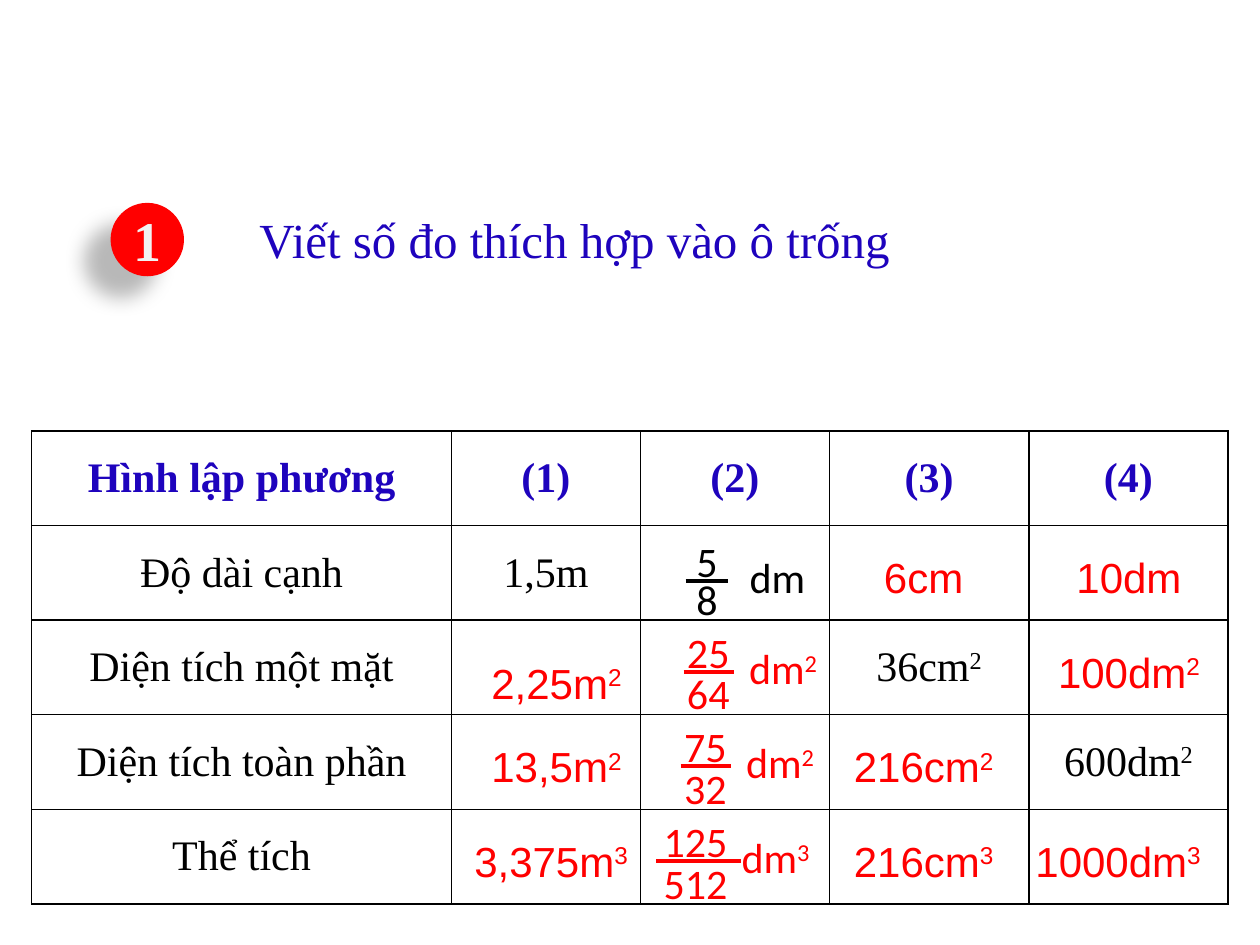
from dataclasses import dataclass

from lxml import etree
from pptx import Presentation
from pptx import util as u
from pptx.dml.color import RGBColor
from pptx.enum import shapes, text
from pptx.oxml import ns


@dataclass(frozen=True)
class Theme:
    ink: str = "000000"
    heading: str = "1E03BD"
    answer: str = "FF0000"
    badge_ink: str = "F2F2F2"
    serif: str = "Times New Roman"
    sans: str = "Arial"
    math: str = "Calibri"
    badge_size: int = 32
    title_size: int = 28
    body_size: int = 24
    rule: float = 1
    bar: float = 2.25


def child(parent, tag, **attributes):
    return etree.SubElement(parent, ns.qn(tag), attributes)


class Worksheet:
    """Draws the parts of an exercise on one slide in one theme."""

    def __init__(self, slide, theme):
        self.slide, self.theme = slide, theme

    def fill_in(self, frame, wording, face, color, size=None, bold=False, centred=True):
        base, _, power = wording.partition("^")
        line = frame.paragraphs[0]
        line.text = base
        if power:
            exponent = line.add_run()
            exponent.text = power
            exponent.font._element.set("baseline", "30000")
        line.alignment = text.PP_ALIGN.CENTER if centred else text.PP_ALIGN.LEFT
        for run in line.runs:
            run.font.name, run.font.bold = face, bold
            run.font.size = u.Pt(size or self.theme.body_size)
            run.font.color.rgb = RGBColor.from_string(color)

    def label(self, wording, left, top, width, height, face, color, parent=None, **style):
        box = (parent or self.slide).shapes.add_textbox(
            u.Cm(left), u.Cm(top), u.Cm(width), u.Cm(height))
        box.text_frame.word_wrap = True
        box.text_frame.auto_size = text.MSO_AUTO_SIZE.SHAPE_TO_FIT_TEXT
        self.fill_in(box.text_frame, wording, face, color, **style)

    def badge(self, number, left, top, size):
        disc = self.slide.shapes.add_shape(
            shapes.MSO_SHAPE.OVAL, u.Cm(left), u.Cm(top), u.Cm(size), u.Cm(size))
        disc.fill.solid()
        disc.fill.fore_color.rgb = RGBColor.from_string(self.theme.answer)
        disc.line.fill.background()
        disc.shadow.inherit = False
        effects = disc._element.spPr.find(ns.qn("a:effectLst"))
        shade = child(effects, "a:outerShdw", blurRad="150000", dist="250000",
                      dir="8460000", algn="ctr", rotWithShape="0")
        tint = child(shade, "a:srgbClr", val=self.theme.ink)
        child(tint, "a:alpha", val="28000")
        disc.text_frame.vertical_anchor = text.MSO_ANCHOR.MIDDLE
        self.fill_in(disc.text_frame, number, self.theme.serif, self.theme.badge_ink,
                     size=self.theme.badge_size, bold=True)

    def border(self, cell):
        properties = cell._tc.get_or_add_tcPr()
        for side in "LRTB":
            edge = child(properties, f"a:ln{side}", w=str(int(u.Pt(self.theme.rule))))
            child(child(edge, "a:solidFill"), "a:srgbClr", val=self.theme.ink)

    def table(self, rows, widths, left, top, height):
        grid = self.slide.shapes.add_table(
            len(rows), len(widths), u.Cm(left), u.Cm(top),
            u.Cm(sum(widths)), u.Cm(height)).table
        grid.first_row = grid.horz_banding = False
        for column, width in zip(grid.columns, widths):
            column.width = u.Cm(width)
        for r, row in enumerate(rows):
            for c, wording in enumerate(row):
                cell = grid.cell(r, c)
                self.border(cell)
                cell.fill.background()
                cell.vertical_anchor = text.MSO_ANCHOR.MIDDLE
                if wording:
                    color = self.theme.ink if r else self.theme.heading
                    self.fill_in(cell.text_frame, wording, self.theme.serif, color, bold=r == 0)

    def fraction(self, top_number, bottom_number, unit, color, left, top,
                 drop, unit_shift, bar_shift, bar_length):
        group = self.slide.shapes.add_group_shape()
        width = 0.4 + 0.75 * len(top_number)
        for wording, dx, dy, w in ((top_number, 0, 0, width),
                                   (bottom_number, 0, drop, width),
                                   (unit, unit_shift, 0.33, 2.03)):
            self.label(wording, left + dx, top + dy, w, 1.27, self.theme.math, color,
                       parent=group, centred=False)
        start, level = left + bar_shift, u.Cm(top + 1.05)
        bar = group.shapes.add_connector(
            shapes.MSO_CONNECTOR.STRAIGHT, u.Cm(start), level, u.Cm(start + bar_length), level)
        bar.line.color.rgb = RGBColor.from_string(color)
        bar.line.width = u.Pt(self.theme.bar)
        child(bar._element.spPr, "a:effectLst")


def main():
    deck = Presentation()
    deck.slide_width, deck.slide_height = u.Cm(25.4), u.Cm(19.05)
    theme = Theme()
    sheet = Worksheet(deck.slides.add_slide(deck.slide_layouts[6]), theme)

    sheet.badge("1", 2.23, 4.09, 1.48)
    sheet.label("Viết số đo thích hợp vào ô trống", 4.98, 4.09, 15.88, 1.45,
                theme.serif, theme.heading, size=theme.title_size, centred=False)

    measures = [
        ("Hình lập phương", "(1)", "(2)", "(3)", "(4)"),
        ("Độ dài cạnh", "1,5m", "", "", ""),
        ("Diện tích một mặt", "", "", "36cm^2", ""),
        ("Diện tích toàn phần", "", "", "", "600dm^2"),
        ("Thể tích", "", "", "", ""),
    ]
    table_height = 9.53
    sheet.table(measures, (8.46, 3.81, 3.81, 4.02, 4.02), 0.64, 8.69, table_height)

    fractions = [
        ("5", "8", "dm", theme.ink, 13.79, 10.67, 0.76, 1.07, 0.03, 0.86),
        ("25", "64", "dm^2", theme.answer, 13.6, 12.5, 0.84, 1.25, 0.18, 1.02),
        ("75", "32", "dm^2", theme.answer, 13.54, 14.4, 0.84, 1.25, 0.18, 1.02),
        ("125", "512", "dm^3", theme.answer, 13.13, 16.31, 0.86, 1.57, 0.1, 1.7),
    ]
    for parts in fractions:
        sheet.fraction(*parts)

    row_height = table_height / len(measures)
    narrow, wide = 3.38, 4.02
    answers = [
        ("2,25m^2", 1, 9.53, narrow, 0.22), ("13,5m^2", 2, 9.53, narrow, 0),
        ("3,375m^3", 3, 9.1, wide, 0),
        ("6cm", 0, 16.93, narrow, 0), ("216cm^2", 2, 16.93, narrow, 0),
        ("216cm^3", 3, 16.93, narrow, 0),
        ("10dm", 0, 20.75, wide, 0), ("100dm^2", 1, 20.75, wide, 0),
        ("1000dm^3", 3, 20.53, wide, 0),
    ]
    for wording, row, left, width, nudge in answers:
        sheet.label(wording, left, 11 + row * row_height + nudge, width, 1.28,
                    theme.sans, theme.answer)

    deck.save("out.pptx")


if __name__ == "__main__":
    main()
